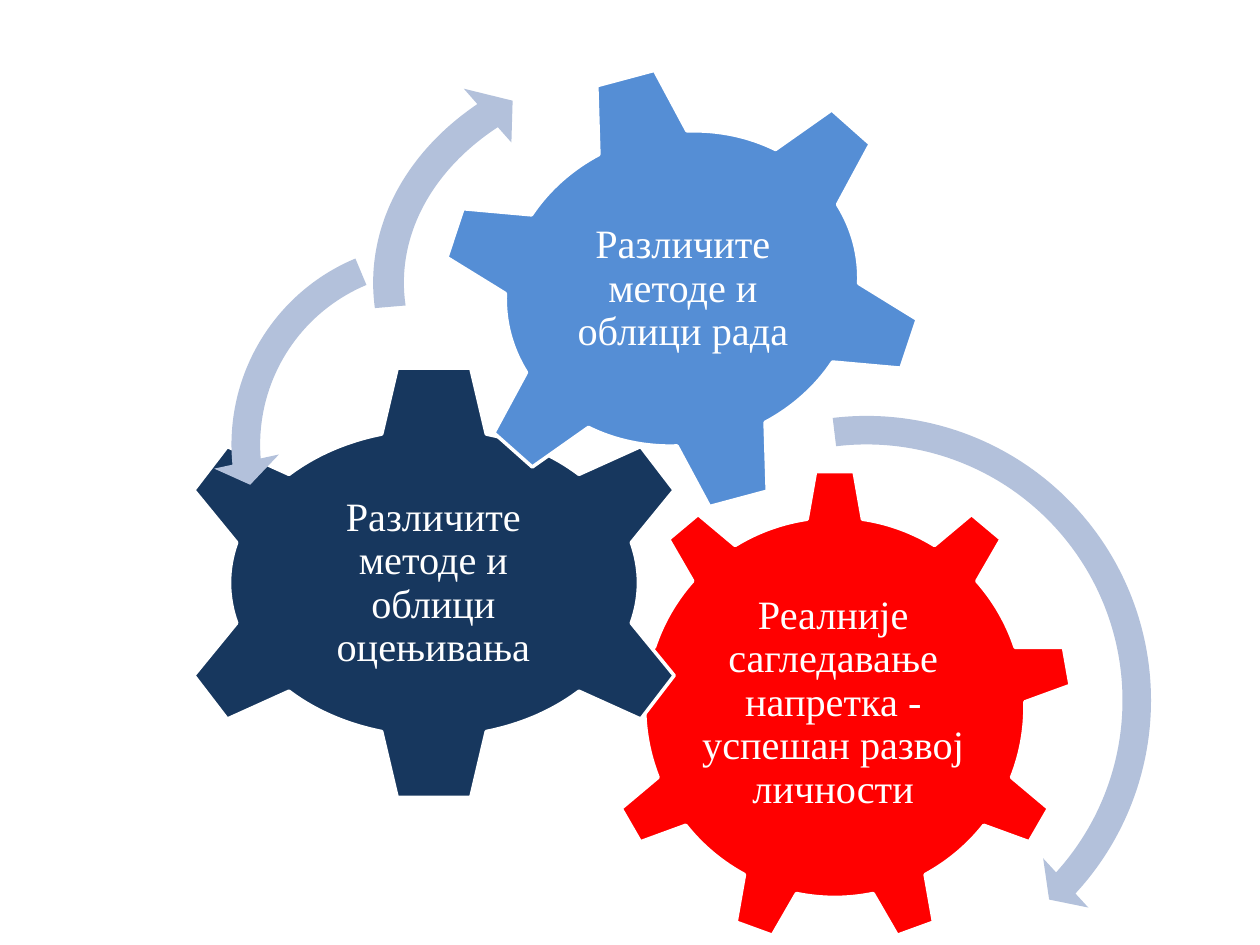
from pptx import Presentation
from pptx.dml.color import RGBColor
from pptx.enum.shapes import MSO_SHAPE
from pptx.enum.text import MSO_ANCHOR, PP_ALIGN
from pptx.util import Cm, Pt

GEAR6, GEAR9 = MSO_SHAPE.GEAR_6, MSO_SHAPE.GEAR_9
RIGHT, LEFT = MSO_SHAPE.CIRCULAR_ARROW, MSO_SHAPE.LEFT_CIRCULAR_ARROW
MIDDLE, CENTER = MSO_ANCHOR.MIDDLE, PP_ALIGN.CENTER

COLORS = {"red": "FF0000", "navy": "17375E", "blue": "558ED5",
          "arrow": "B3C1DB", "white": "FFFFFF"}

GEARS = [
    {"kind": GEAR9, "color": "red", "turn": 0,
     "box": (12.04, 9.47, 9.58, 9.58), "label": (13.94, 11.71, 5.72, 4.93),
     "text": "Реалније сагледавање напретка - успешан развој личности"},
    {"kind": GEAR6, "color": "navy", "turn": 0,
     "box": (3.3, 7.32, 10.9, 8.86), "label": (5.82, 9.58, 5.84, 4.37),
     "text": "Различите методе и облици оцењивања"},
    {"kind": GEAR6, "color": "blue", "turn": 345,
     "box": (8.81, 1.32, 9.88, 8.99), "label": (11.05, 3.25, 5.44, 5.16),
     "text": "Различите методе и облици рада"},
]

ARROWS = [
    {"kind": RIGHT, "box": (11.35, 8, 12.24, 12.24),
     "band": 4.7, "head": 5.5, "angles": (4.98, 42.51, 263.16)},
    {"kind": LEFT, "box": (4.29, 4.52, 8.89, 8.89),
     "band": 6.5, "head": 7.5, "angles": (7.17, 174.82, 247.3)},
    {"kind": RIGHT, "box": (7.11, 0.53, 12.95, 10.34),
     "band": 6, "head": 7, "angles": (6.57, 221.9, 175.14)},
]


def tint(name):
    return RGBColor.from_string(COLORS[name])


def add_form(slide, kind, box, color):
    form = slide.shapes.add_shape(kind, *map(Cm, box))
    form.shadow.inherit = False
    form.fill.solid()
    form.fill.fore_color.rgb = tint(color)
    return form


def add_text(slide, text, box, size=23, font="Times New Roman", color="white"):
    frame = slide.shapes.add_textbox(*map(Cm, box)).text_frame
    frame.word_wrap = True
    frame.vertical_anchor = MIDDLE
    frame.margin_left = frame.margin_right = Cm(0.08)
    frame.margin_top = frame.margin_bottom = Cm(0.08)
    para = frame.paragraphs[0]
    para.alignment = CENTER
    para.line_spacing = 0.9
    run = para.add_run()
    run.text = text
    run.font.size = Pt(size)
    run.font.name = font
    run.font.color.rgb = tint(color)


def add_gear(slide, gear):
    form = add_form(slide, gear["kind"], gear["box"], gear["color"])
    form.rotation = gear["turn"]
    form.line.color.rgb = tint("white")
    form.line.width = Pt(2)
    add_text(slide, gear["text"], gear["label"])


def add_arrow(slide, arrow):
    form = add_form(slide, arrow["kind"], arrow["box"], "arrow")
    form.line.fill.background()
    turns = [angle * 0.6 for angle in arrow["angles"]]
    values = [arrow["band"] / 100, *turns, arrow["head"] / 100]
    for index, value in enumerate(values):
        form.adjustments[index] = value


def main():
    deck = Presentation()
    deck.slide_width, deck.slide_height = Cm(25.4), Cm(19.05)
    slide = deck.slides.add_slide(deck.slide_layouts[6])
    for gear in GEARS:
        add_gear(slide, gear)
    for arrow in ARROWS:
        add_arrow(slide, arrow)
    deck.save("out.pptx")


if __name__ == "__main__":
    main()
